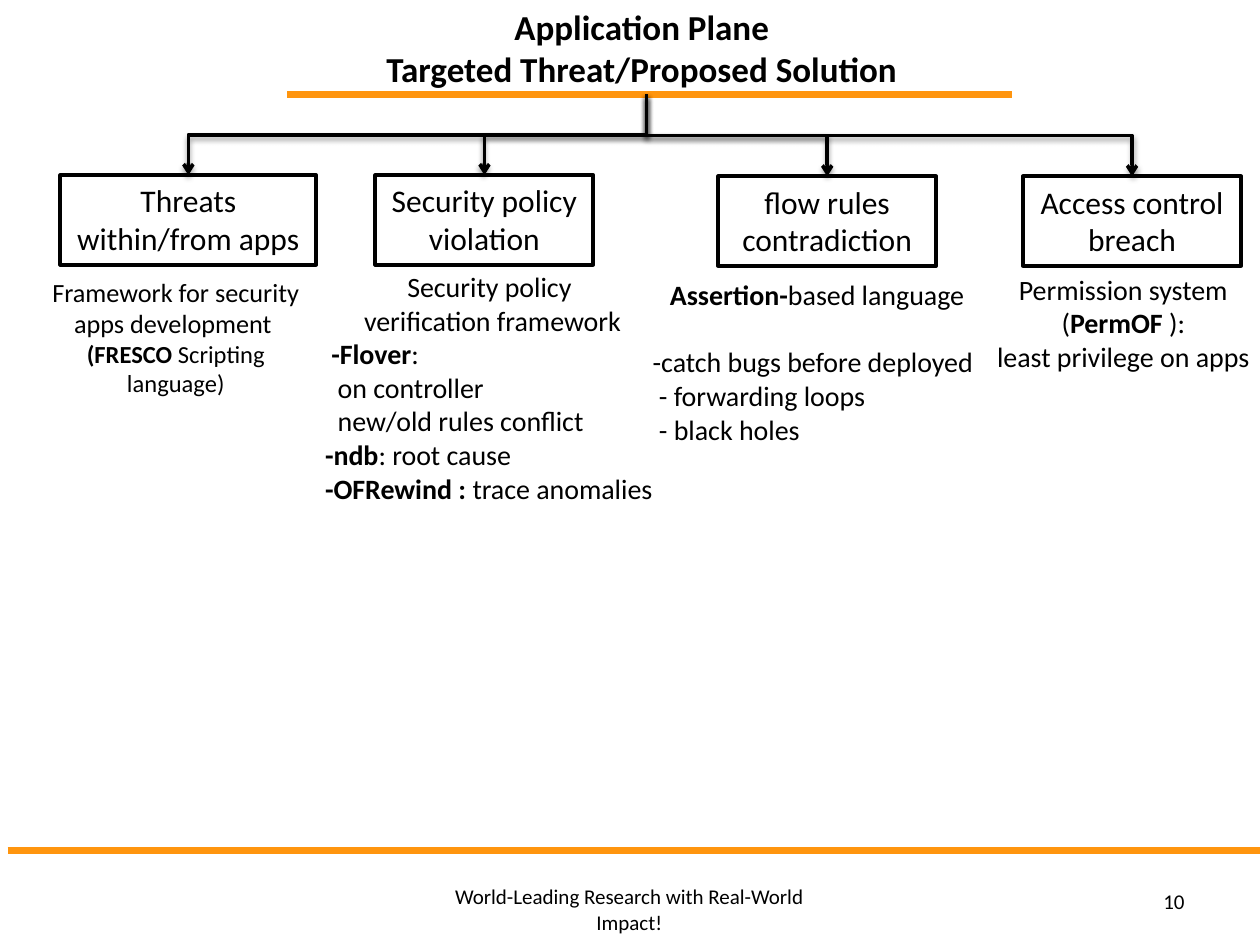
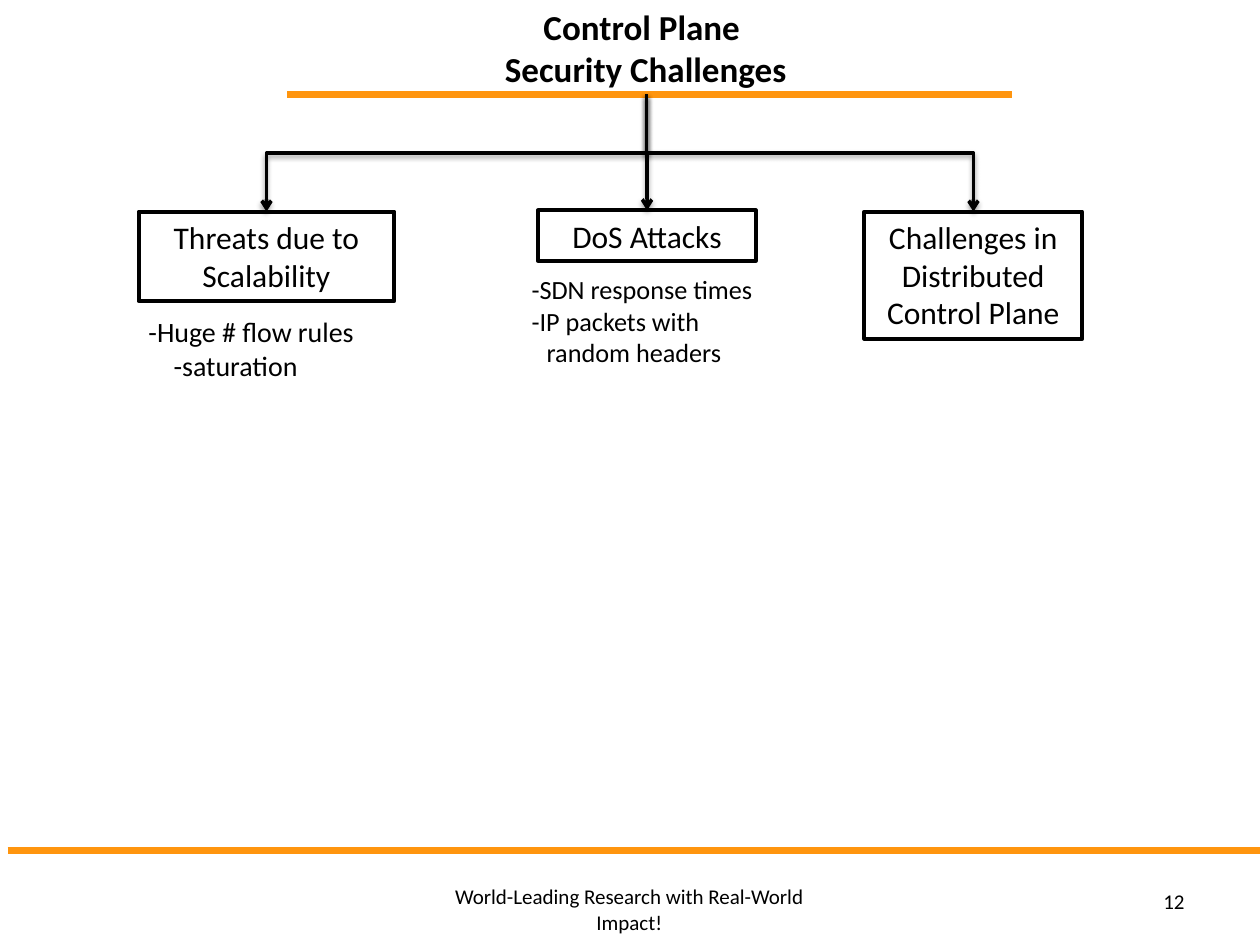
from dataclasses import dataclass

from lxml import etree
from pptx import Presentation
from pptx.dml.color import RGBColor
from pptx.enum.shapes import MSO_CONNECTOR, MSO_SHAPE
from pptx.enum.text import MSO_ANCHOR, MSO_AUTO_SIZE, PP_ALIGN
from pptx.oxml import parse_xml
from pptx.oxml.ns import nsdecls, qn
from pptx.util import Inches, Pt

LEFT, CENTER, RIGHT = PP_ALIGN.LEFT, PP_ALIGN.CENTER, PP_ALIGN.RIGHT
TOP, MIDDLE = MSO_ANCHOR.TOP, MSO_ANCHOR.MIDDLE
NO_FIT = MSO_AUTO_SIZE.NONE
STRAIGHT, ELBOW = MSO_CONNECTOR.STRAIGHT, MSO_CONNECTOR.ELBOW
RECTANGLE = MSO_SHAPE.RECTANGLE

COLORS = {"ink": "000000", "rule": "FF950E"}
FONT = "Calibri"
FOOTER = "World-Leading Research with Real-World Impact!"
ROOT = (5.13, 0.75)
HANGING = 0.12


@dataclass
class Line:
    """One paragraph: its (text, bold) spans and its layout."""
    spans: list
    align: PP_ALIGN = LEFT
    size: float = 16
    indent: float = 0
    hanging: float = 0
    before: float = 0


@dataclass
class Branch:
    """A boxed topic, with the details that hang below it."""
    topic: str
    box: tuple
    detail_box: tuple = None
    details: tuple = ()
    inset: float = 0


def plain(text, **layout):
    """Return a line made of one regular span."""
    return Line([(text, False)], **layout)


def color(name):
    """Return a palette colour."""
    return RGBColor.from_string(COLORS[name])


def add_span(para, text, size, bold=False):
    """Append one formatted run to a paragraph."""
    span = para.add_run()
    span.text = text
    span.font.name = FONT
    span.font.size = Pt(size)
    span.font.bold = bold
    span.font.color.rgb = color("ink")


def fill_frame(frame, lines, anchor=TOP, inset=None):
    """Write lines into a text frame."""
    frame.word_wrap = True
    frame.auto_size = NO_FIT
    frame.vertical_anchor = anchor
    if inset is not None:
        frame.margin_left = frame.margin_right = Inches(inset)
        frame.margin_top = frame.margin_bottom = Inches(inset / 2)
    for index, line in enumerate(lines):
        para = frame.add_paragraph() if index else frame.paragraphs[0]
        para.alignment = line.align
        properties = para._p.get_or_add_pPr()
        properties.set("marL", str(Inches(line.indent + line.hanging)))
        properties.set("indent", str(Inches(-line.hanging)))
        if line.before:
            para.space_before = Pt(line.before)
        for text, bold in line.spans:
            add_span(para, text, line.size, bold)


def add_text(page, box, lines, anchor=TOP, inset=0.1):
    """Place a text box."""
    shape = page.shapes.add_textbox(*map(Inches, box))
    fill_frame(shape.text_frame, lines, anchor, inset)


def add_line(page, kind, start, end, hue, width):
    """Draw a connector without a shadow and return it."""
    connector = page.shapes.add_connector(kind, *map(Inches, start + end))
    connector.line.color.rgb = color(hue)
    connector.line.width = Pt(width)
    etree.SubElement(connector._element.spPr, qn("a:effectLst"))
    return connector


def add_branch_arrow(page, start, end):
    """Draw an elbow arrow that goes down, across and down to its end."""
    across, drop = end[0] - start[0], end[1] - start[1]
    middle_x, middle_y = start[0] + across / 2, start[1] + drop / 2
    side = 1 if across > 0 else -1
    half_height = abs(across) / 2
    arrow = add_line(page, ELBOW,
                     (middle_x + side * drop / 2, middle_y - half_height),
                     (middle_x - side * drop / 2, middle_y + half_height), "ink", 2)
    properties = arrow._element.spPr
    properties.find(qn("a:xfrm")).set("rot", str((270 if side > 0 else 90) * 60000))
    etree.SubElement(properties.find(qn("a:ln")), qn("a:tailEnd"), type="arrow")
    properties.find(qn("a:effectLst")).append(parse_xml(
        f'<a:outerShdw {nsdecls("a")} blurRad="{Pt(3.1)}" dist="{Pt(1.6)}" dir="5400000" '
        f'rotWithShape="0"><a:srgbClr val="{COLORS["ink"]}"><a:alpha val="38000"/>'
        '</a:srgbClr></a:outerShdw>'))


def add_frame(page, number):
    """Draw the two rules, the footer and the page number."""
    for start, end in (((2.28, 0.75), (8.03, 0.75)), ((0.06, 6.75), (10.02, 6.75))):
        add_line(page, STRAIGHT, start, end, "rule", 4.31)
    add_text(page, (3.25, 6.93, 3.49, 0.57), [plain(FOOTER, align=CENTER, size=12)], MIDDLE)
    add_text(page, (7.17, 6.95, 2.33, 0.4), [plain(number, align=RIGHT, size=12)], MIDDLE)


def add_title(page, box, first, second):
    """Fill the title placeholder with two lines."""
    title = page.shapes.title
    title.left, title.top, title.width, title.height = map(Inches, box)
    fill_frame(title.text_frame, [Line([(first, True)], CENTER, 20)], MIDDLE)
    para = title.text_frame.paragraphs[0]
    para.add_line_break()
    add_span(para, second, 20, True)


def add_branch(page, branch):
    """Draw a topic box, its arrow from the root and its details."""
    left, top, width, _ = branch.box
    shape = page.shapes.add_shape(RECTANGLE, *map(Inches, branch.box))
    shape.shadow.inherit = False
    shape.fill.background()
    shape.line.color.rgb = color("ink")
    shape.line.width = Pt(2.25)
    fill_frame(shape.text_frame, [plain(branch.topic, align=CENTER, size=18)])
    add_branch_arrow(page, ROOT, (left + width / 2, top))
    if branch.details:
        add_text(page, branch.detail_box, branch.details, inset=branch.inset)


def add_tree_page(deck, number, title, branches):
    """Build one slide: frame, title and branches."""
    page = deck.slides.add_slide(deck.slide_layouts[5])
    add_frame(page, number)
    add_title(page, (1.75, 0, 6.75, 0.75), *title)
    for branch in branches:
        add_branch(page, branch)


APPLICATION_BRANCHES = [
    Branch("Threats within/from apps", (0.48, 1.39, 2.03, 0.71), (0.34, 2.19, 2.11, 1.01), (
        plain("Framework for security apps development ", align=CENTER, size=15),
        Line([("(FRESCO ", True), ("Scripting language)", False)], CENTER, 14))),
    Branch("Security policy violation", (2.98, 1.39, 1.73, 0.71), (2.58, 2.14, 2.66, 1.88), (
        plain("Security policy ", align=CENTER),
        plain("verification framework", align=CENTER),
        Line([("-Flover", True), (":", False)], indent=0.05),
        plain("on controller", indent=0.1),
        plain("new/old rules conflict", indent=0.1),
        Line([("-ndb", True), (": root cause", False)]),
        Line([("-OFRewind : ", True), ("trace anomalies", False)]))),
    Branch("flow rules contradiction", (5.7, 1.4, 1.73, 0.71), (5.18, 2.2, 2.61, 1.35), (
        Line([("Assertion-", True), ("based language", False)], CENTER),
        plain("-catch bugs before deployed", before=19.5),
        plain("- forwarding loops", indent=0.05),
        plain("- black holes", indent=0.05))),
    Branch("Access control breach", (8.12, 1.4, 1.73, 0.71), (7.84, 2.16, 2.15, 0.81), (
        Line([("Permission system (", False), ("PermOF", True), (" ):", False)], CENTER),
        plain("least privilege on apps", align=CENTER))),
]

CONTROL_BRANCHES = [
    Branch("Threats due to Scalability", (1.1, 1.68, 2.03, 0.71), (1.08, 2.45, 2.12, 0.64), (
        plain("-Huge # flow rules", hanging=HANGING),
        plain("-saturation", indent=0.2, hanging=HANGING)), 0.1),
    Branch("DoS Attacks", (4.27, 1.67, 1.73, 0.4), (4.12, 2.12, 2.12, 0.86), (
        plain("-SDN response times", size=15, hanging=HANGING),
        plain("-IP packets with random headers", size=15, hanging=HANGING)), 0.1),
    Branch("Challenges in Distributed Control Plane", (6.86, 1.68, 1.73, 1.01)),
]


def main():
    """Build the deck and save it."""
    deck = Presentation()
    deck.slide_width, deck.slide_height = Inches(10), Inches(7.5)
    add_tree_page(deck, "10", ("Application Plane ", "Targeted Threat/Proposed Solution "),
                  APPLICATION_BRANCHES)
    add_tree_page(deck, "12", ("Control Plane ", "Security Challenges"), CONTROL_BRANCHES)
    deck.save("out.pptx")


if __name__ == "__main__":
    main()
